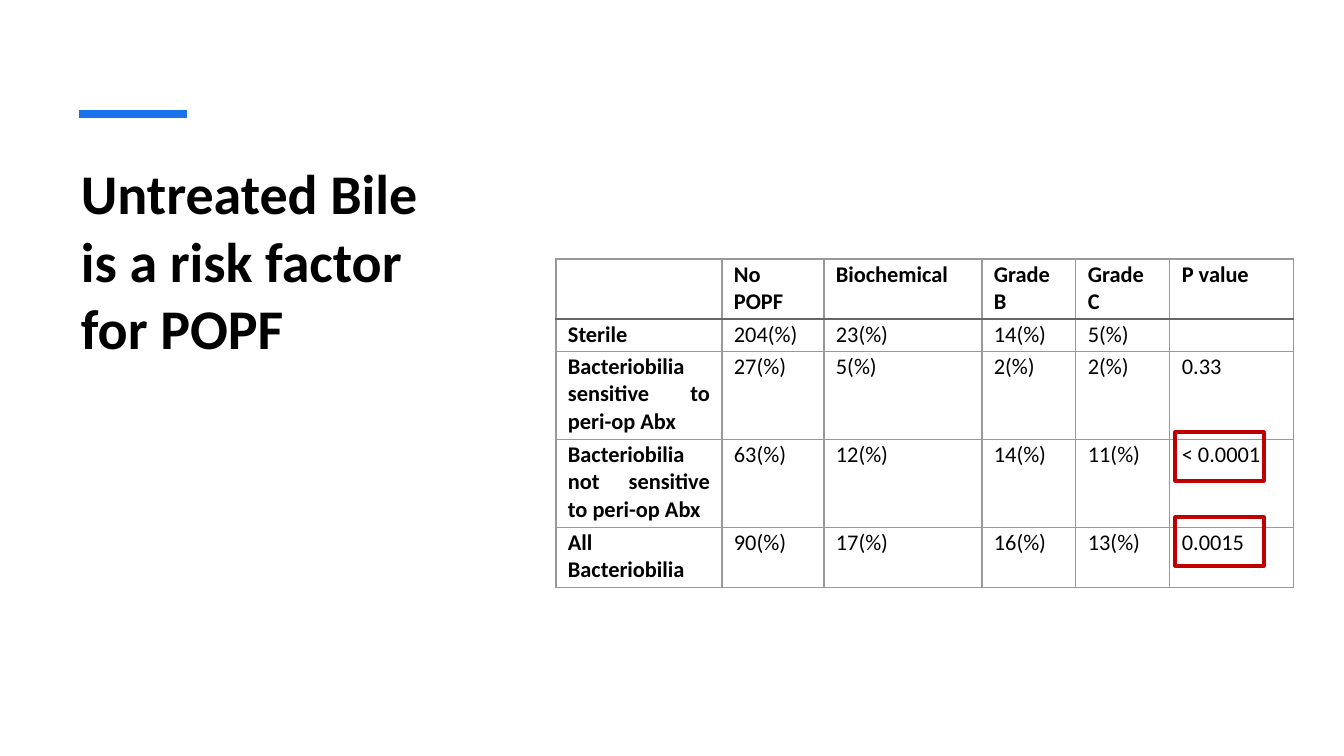
"""Build the slide on untreated bile as a risk factor for POPF."""
from lxml import etree
from pptx import Presentation, util as u
from pptx.dml.color import RGBColor
from pptx.enum import shapes, text
from pptx.oxml.ns import qn

TITLE = "Untreated Bile is a risk factor for POPF"
ROWS = [
    ("", "No POPF", "Biochemical", "Grade B", "Grade C", "P value"),
    ("Sterile", "204(%)", "23(%)", "14(%)", "5(%)", ""),
    ("Bacteriobilia sensitive to peri-op Abx", "27(%)", "5(%)", "2(%)", "2(%)", "0.33"),
    ("Bacteriobilia not sensitive to peri-op Abx", "63(%)", "12(%)", "14(%)", "11(%)", "< 0.0001"),
    ("All Bacteriobilia", "90(%)", "17(%)", "16(%)", "13(%)", "0.0015"),
]
COLUMN_WIDTHS = (166, 102, 158, 94, 94, 124)
ROW_HEIGHTS = (60, 32, 88, 88, 60)
HIGHLIGHT_TOPS = (432, 517)
FONT, BLACK, BLUE, RED = "Calibri", "000000", "1973EB", "C00000"
GRID, HEADER_RULE = ("999999", 1), ("666666", 1.5)
EMU_PER_PX = 914400 / 100.8


def px(length):
    return u.Emu(round(length * EMU_PER_PX))


def area(*lengths):
    return [px(length) for length in lengths]


def color(value):
    return RGBColor.from_string(value)


def add_span(para, words, size, bold):
    span = para.add_run()
    span.text = words
    span.font.name, span.font.size, span.font.bold = FONT, u.Pt(size), bold
    span.font.color.rgb = color(BLACK)


def set_border(cell, index, side, style):
    value, points = style
    edge = etree.Element(qn(f"a:ln{side}"), w=str(u.Pt(points)))
    fill = etree.SubElement(edge, qn("a:solidFill"))
    etree.SubElement(fill, qn("a:srgbClr"), val=value)
    cell._tc.get_or_add_tcPr().insert(index, edge)


def add_title(page):
    box = page.shapes.add_textbox(*area(71, 154, 405, 405))
    box.text_frame.word_wrap = True
    add_span(box.text_frame.paragraphs[0], TITLE, 40, True)


def add_accent(page):
    accent = page.shapes.add_connector(shapes.MSO_CONNECTOR.STRAIGHT, *area(79, 114, 187, 114))
    accent.line.color.rgb, accent.line.width = color(BLUE), u.Pt(6)
    etree.SubElement(accent._element.spPr, qn("a:effectLst"))


def fill_cell(cell, words, row, column):
    cell.fill.background()
    cell.margin_left = cell.margin_right = px(12)
    cell.margin_top, cell.margin_bottom = px(2), 0
    para = cell.text_frame.paragraphs[0]
    para.alignment = text.PP_ALIGN.JUSTIFY
    add_span(para, words, 16, row == 0 or column == 0)
    top = HEADER_RULE if row == 1 else GRID
    bottom = HEADER_RULE if row == 0 else GRID
    for index, (side, style) in enumerate(zip("LRTB", (GRID, GRID, top, bottom))):
        set_border(cell, index, side, style)


def add_results(page):
    frame = page.shapes.add_table(len(ROWS), len(COLUMN_WIDTHS),
                                  *area(556, 259, sum(COLUMN_WIDTHS), sum(ROW_HEIGHTS)))
    table = frame.table
    table.first_row = table.horz_banding = False
    for column, width in zip(table.columns, COLUMN_WIDTHS):
        column.width = px(width)
    for row, height in zip(table.rows, ROW_HEIGHTS):
        row.height = px(height)
    for row, values in enumerate(ROWS):
        for column, words in enumerate(values):
            fill_cell(table.cell(row, column), words, row, column)


def add_highlight(page, top):
    box = page.shapes.add_shape(shapes.MSO_SHAPE.RECTANGLE, *area(1175, top, 89, 49))
    box.shadow.inherit = False
    box.fill.background()
    box.line.color.rgb, box.line.width = color(RED), u.Pt(2.25)


def main():
    deck = Presentation()
    deck.slide_width, deck.slide_height = area(1344, 756)
    page = deck.slides.add_slide(deck.slide_layouts[6])
    add_title(page)
    add_accent(page)
    add_results(page)
    for top in HIGHLIGHT_TOPS:
        add_highlight(page, top)
    deck.save("out.pptx")


if __name__ == "__main__":
    main()
